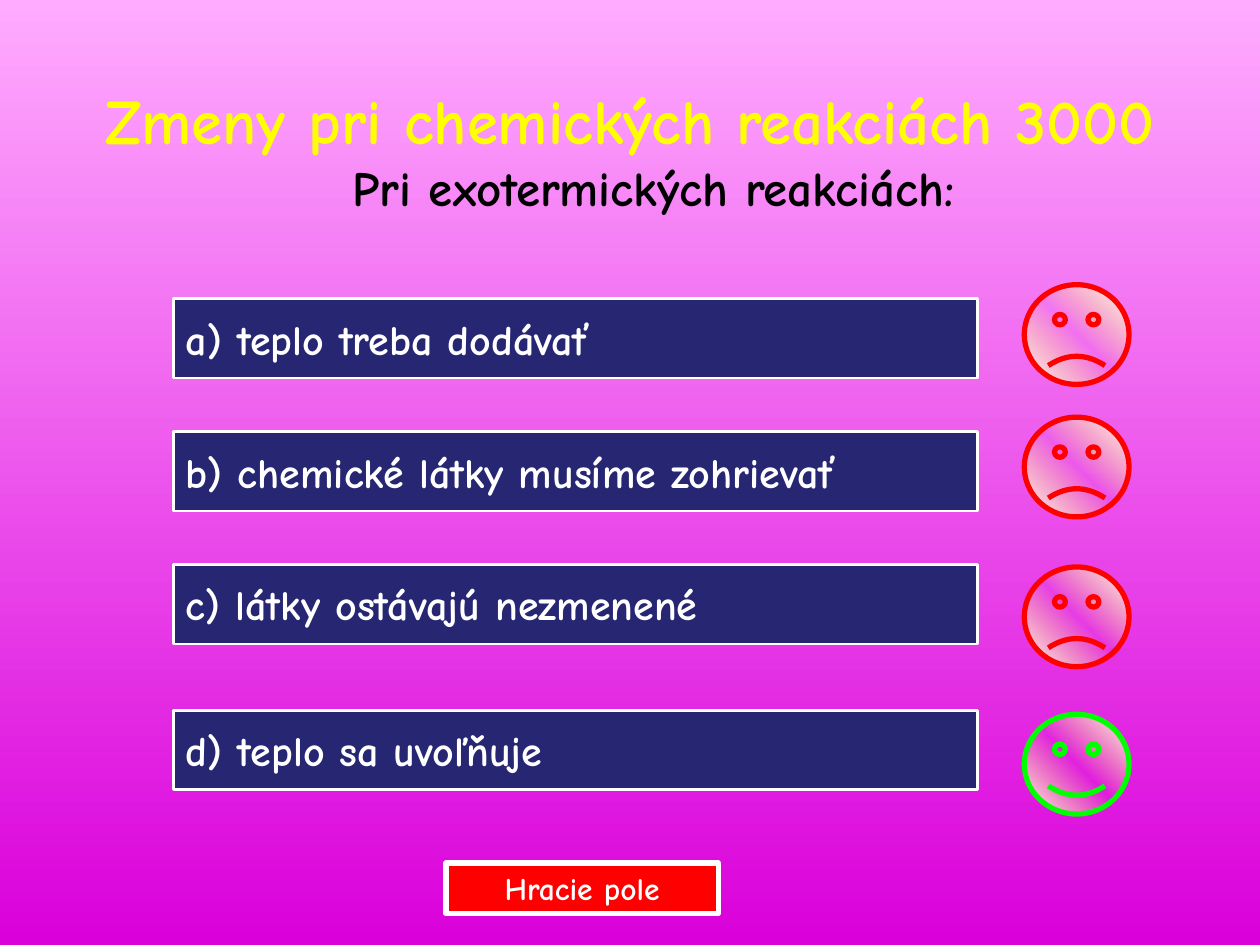
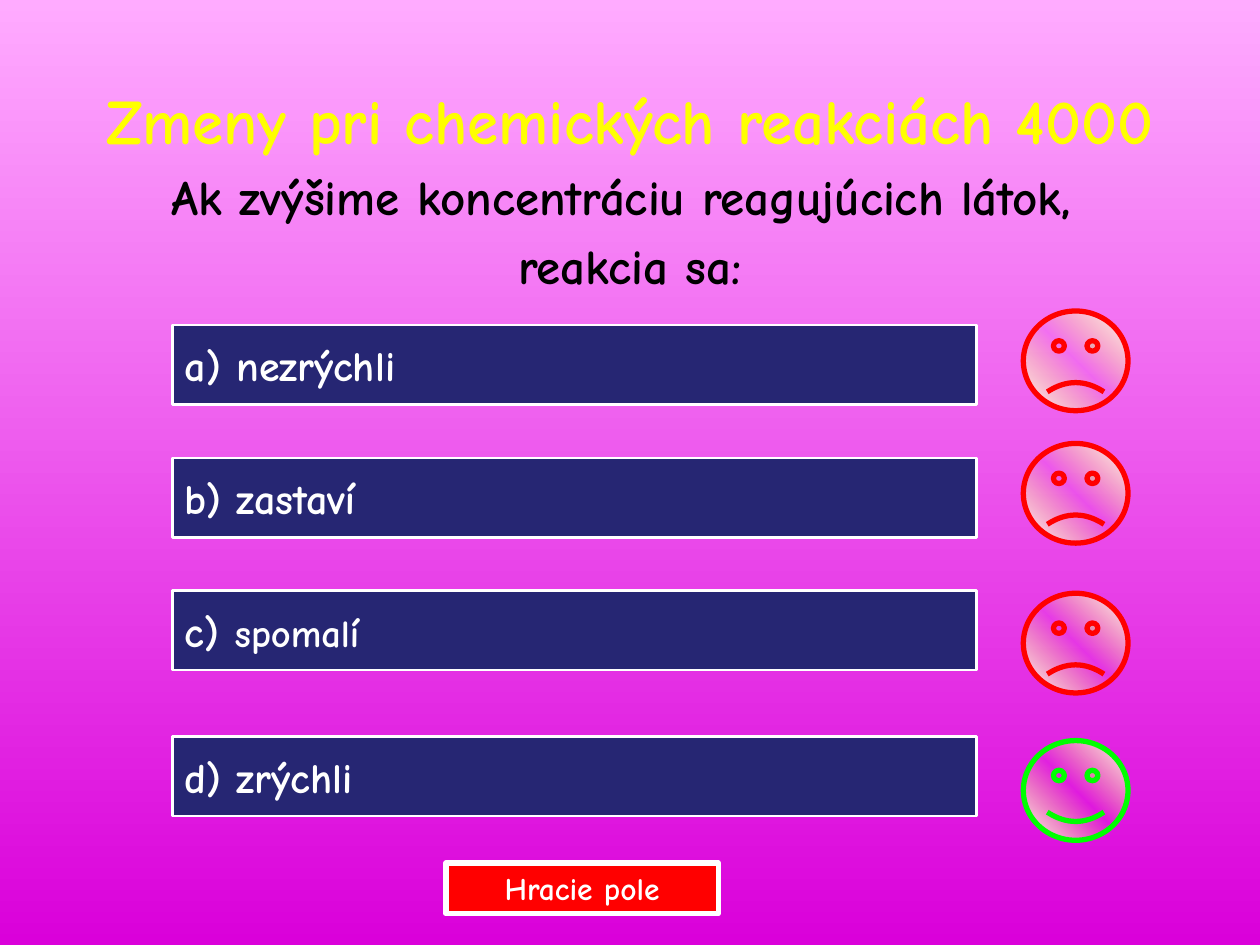
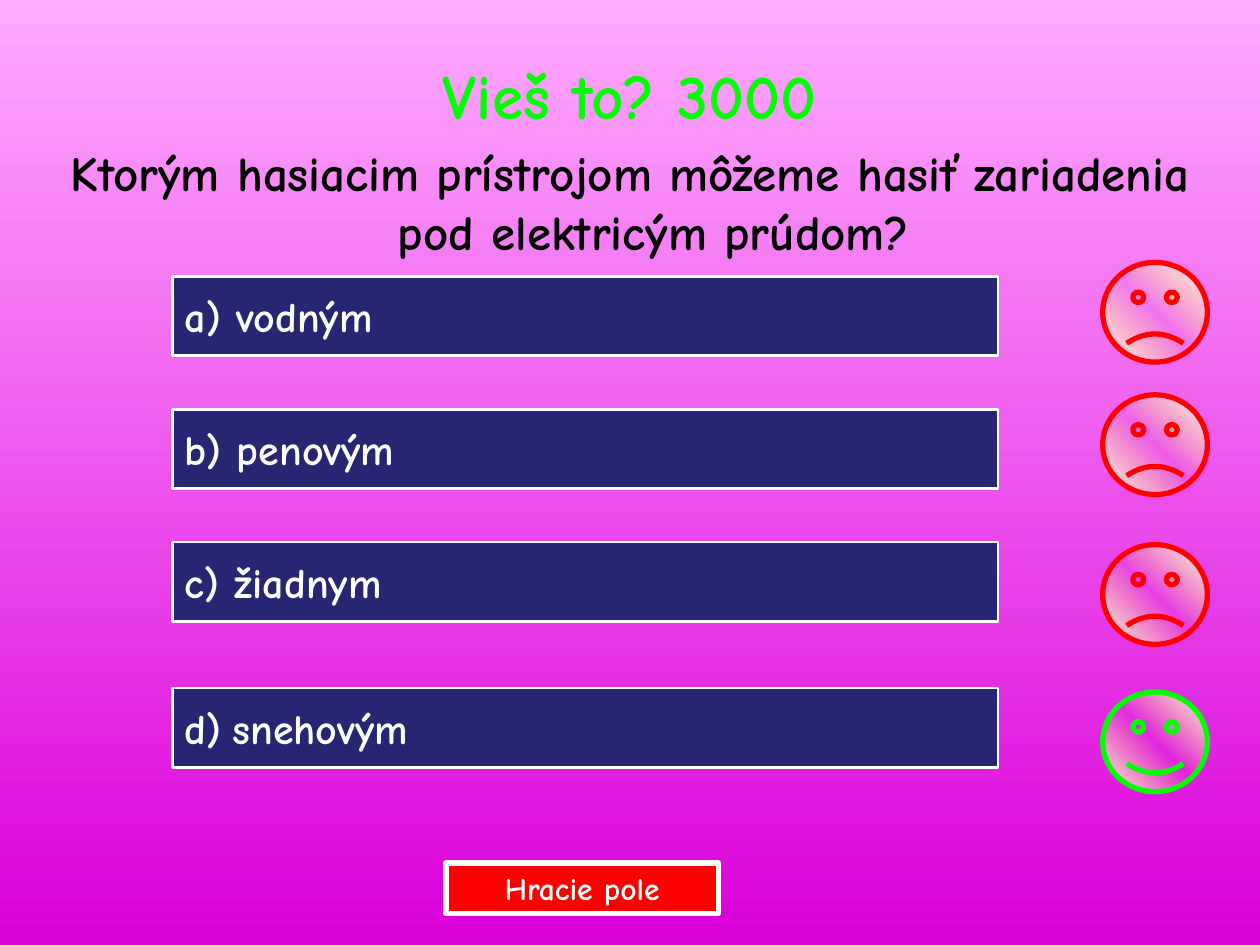
from copy import deepcopy
from dataclasses import dataclass

from lxml.etree import SubElement
from pptx import Presentation
from pptx.dml.color import RGBColor as Color
from pptx.enum.shapes import MSO_SHAPE as Preset
from pptx.enum.text import MSO_ANCHOR as Anchor, PP_ALIGN as Align
from pptx.oxml.ns import qn
from pptx.util import Cm, Pt


@dataclass(frozen=True)
class Theme:
    font: str = "Comic Neue"
    background: tuple = ("FFABFF", "DA00DA")
    yellow: str = "FFFF00"
    green: str = "00FF00"
    red: str = "FF0000"
    navy: str = "262673"
    white: str = "FFFFFF"
    black: str = "000000"
    glow: str = "FFFF66"
    title_size: float = 36
    question_size: float = 28
    answer_size: float = 24
    smaller_answer_size: float = 22
    narrow_gap_size: float = 17
    button_size: float = 18
    thin: float = 1.5
    thick: float = 3


THEME = Theme()
WIDE_HEADING = (0, 1.52, 25.4, 1.9)
NARROW_HEADING = (1, 1.02, 23.4, 1.9)

QUIZ = [
    {
        "title": "Zmeny pri chemických reakciách 3000",
        "title_color": THEME.yellow,
        "question": ["Pri exotermických reakciách:"],
        "hanging_question": False,
        "heading": WIDE_HEADING,
        "answers": [
            "a) teplo treba dodávať",
            "b) chemické látky musíme zohrievať",
            "c) látky ostávajú nezmenené",
            "d) teplo sa uvoľňuje",
        ],
        "answers_at": (3.5, 6.02),
        "answer_width": 16.2,
        "face_left": 20.65,
    },
    {
        "title": "Zmeny pri chemických reakciách 4000",
        "title_color": THEME.yellow,
        "question": ["Ak zvýšime koncentráciu reagujúcich látok, ", "reakcia sa:"],
        "hanging_question": True,
        "heading": WIDE_HEADING,
        "answers": [
            "a) nezrýchli",
            "b) zastaví",
            [("c) ", THEME.answer_size), ("spomalí", THEME.smaller_answer_size)],
            "d) zrýchli",
        ],
        "answers_at": (3.48, 6.55),
        "answer_width": 16.2,
        "face_left": 20.63,
    },
    {
        "title": "Vieš to? 3000",
        "title_color": THEME.green,
        "question": ["Ktorým hasiacim prístrojom môžeme hasiť zariadenia pod elektricým prúdom?"],
        "hanging_question": True,
        "heading": NARROW_HEADING,
        "answers": [
            "a) vodným",
            "b) penovým",
            "c) žiadnym",
            [("d)", THEME.answer_size), (" ", THEME.narrow_gap_size), ("snehovým", THEME.answer_size)],
        ],
        "answers_at": (3.48, 5.57),
        "answer_width": 16.64,
        "face_left": 22.23,
    },
]

CORRECT_ROW = 3
ANSWER_OFFSETS = (0, 2.68, 5.36, 8.3)
FACE_OFFSETS = (-0.28, 2.39, 5.41, 8.38)
ANSWER_HEIGHT = 1.6
FACE_SIZE = (2.11, 2.01)
FACE_BEND = 0.047
BOARD_BUTTON = ("Hracie pole", (8.99, 17.4, 5.49, 1.02))
HANG = Cm(0.95)


def format_run(run, size, color):
    run.font.name = THEME.font
    run.font.size = Pt(size)
    run.font.bold = True
    run.font.color.rgb = Color.from_string(color)


def fill_gradient(fill, colors, angle):
    fill.gradient()
    fill.gradient_angle = angle
    for stop, color, position in zip(fill.gradient_stops, colors, (0, 1)):
        stop.color.rgb = Color.from_string(color)
        stop.position = position


def add_preset(slide, preset, box, line_color, line_width):
    shape = slide.shapes.add_shape(preset, *map(Cm, box))
    shape.shadow.inherit = False
    shape.line.color.rgb = Color.from_string(line_color)
    shape.line.width = Pt(line_width)
    return shape


def add_button(slide, box, parts, fill_color, line_width, alignment):
    shape = add_preset(slide, Preset.ACTION_BUTTON_CUSTOM, box, THEME.white, line_width)
    shape.fill.solid()
    shape.fill.fore_color.rgb = Color.from_string(fill_color)
    text_frame = shape.text_frame
    text_frame.word_wrap = False
    text_frame.vertical_anchor = Anchor.MIDDLE
    paragraph = text_frame.paragraphs[0]
    paragraph.alignment = alignment
    for text, size in parts:
        run = paragraph.add_run()
        run.text = text
        format_run(run, size, THEME.white)


def add_face(slide, left, top, correct):
    color = THEME.green if correct else THEME.red
    shape = add_preset(slide, Preset.SMILEY_FACE, (left, top, *FACE_SIZE), color, THEME.thick)
    shape.adjustments[0] = FACE_BEND if correct else -FACE_BEND
    fill_gradient(shape.fill, (THEME.white, THEME.white), 45)
    stops = next(shape._element.iter(qn("a:gsLst")))
    middle = deepcopy(stops[0])
    middle.set("pos", "50000")
    middle[0].set("val", THEME.glow)
    SubElement(middle[0], qn("a:alpha"), val="0")
    stops.insert(1, middle)


def indent_paragraph(paragraph, hanging):
    paragraph.alignment = Align.CENTER
    properties = paragraph._p.get_or_add_pPr()
    properties.set("marL", str(HANG))
    properties.set("indent", str(-HANG if hanging else 0))
    if hanging:
        spacing = SubElement(properties, qn("a:spcBef"))
        SubElement(spacing, qn("a:spcPct"), val="20000")


def add_heading(slide, item):
    text_frame = slide.shapes.add_textbox(*map(Cm, item["heading"])).text_frame
    text_frame.word_wrap = True
    text_frame.text = "\n".join([item["title"], *item["question"]])
    for index, paragraph in enumerate(text_frame.paragraphs):
        is_title = index == 0
        indent_paragraph(paragraph, is_title or item["hanging_question"])
        size = THEME.title_size if is_title else THEME.question_size
        color = item["title_color"] if is_title else THEME.black
        format_run(paragraph.runs[0], size, color)


def build_slide(presentation, item):
    slide = presentation.slides.add_slide(presentation.slide_layouts[6])
    fill_gradient(slide.background.fill, THEME.background, 270)
    add_heading(slide, item)
    left, top = item["answers_at"]
    for row, answer in enumerate(item["answers"]):
        parts = [(answer, THEME.answer_size)] if isinstance(answer, str) else answer
        box = (left, top + ANSWER_OFFSETS[row], item["answer_width"], ANSWER_HEIGHT)
        add_button(slide, box, parts, THEME.navy, THEME.thin, Align.LEFT)
        add_face(slide, item["face_left"], top + FACE_OFFSETS[row], row == CORRECT_ROW)
    label, box = BOARD_BUTTON
    add_button(slide, box, [(label, THEME.button_size)], THEME.red, THEME.thick, Align.CENTER)


def main():
    presentation = Presentation()
    presentation.slide_width = Cm(25.4)
    presentation.slide_height = Cm(19.05)
    for item in QUIZ:
        build_slide(presentation, item)
    presentation.save("out.pptx")


if __name__ == "__main__":
    main()
